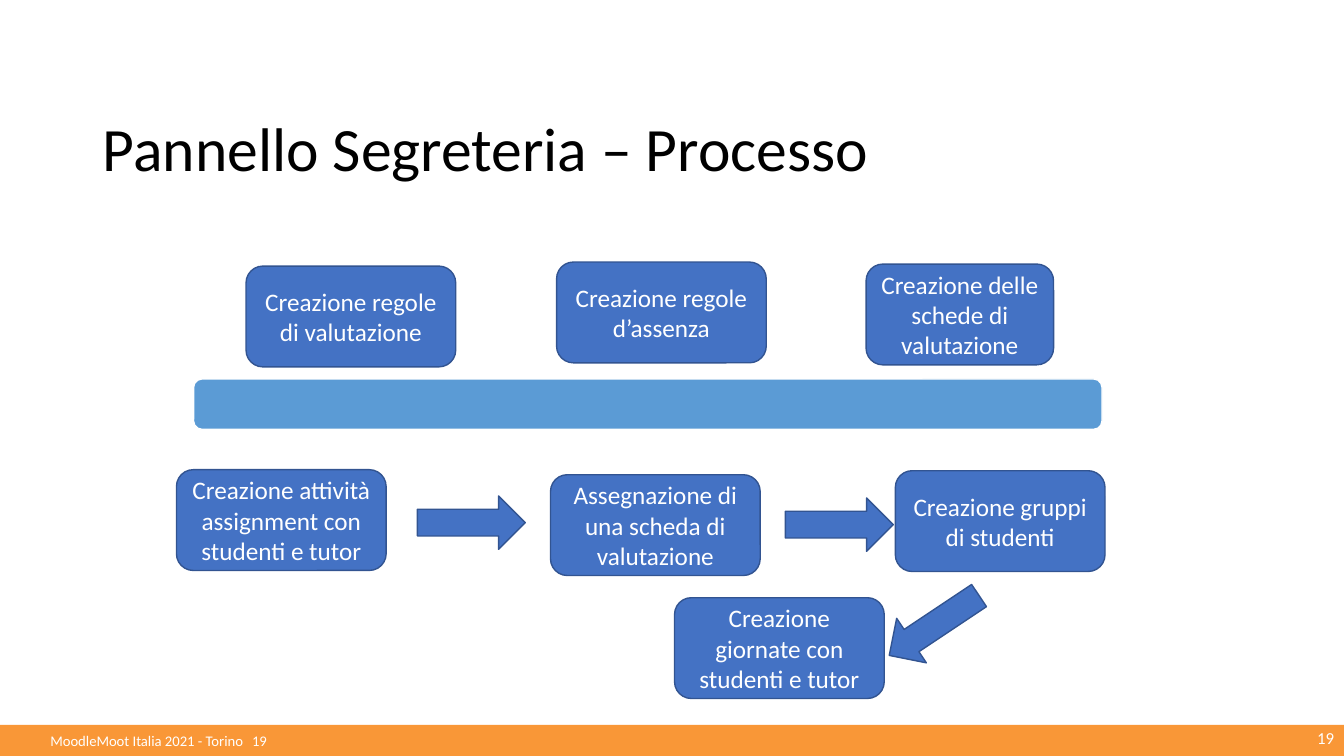
from dataclasses import dataclass

from lxml.etree import SubElement
from pptx import Presentation
from pptx.dml.color import RGBColor
from pptx.enum.shapes import MSO_SHAPE
from pptx.enum.text import MSO_ANCHOR, MSO_AUTO_SIZE, PP_ALIGN
from pptx.oxml.ns import qn
from pptx.shapes.autoshape import Shape
from pptx.slide import Slide
from pptx.text.text import TextFrame
from pptx.util import Inches, Pt

WHITE = RGBColor(0xFF, 0xFF, 0xFF)
BLACK = RGBColor(0, 0, 0)
BLUE = RGBColor(0x44, 0x72, 0xC4)
NAVY = RGBColor(0x32, 0x54, 0x91)
SKY = RGBColor(0x5B, 0x9B, 0xD5)
ORANGE = RGBColor(0xF9, 0x97, 0x37)
FONT = "Calibri"
WIDTH, HEIGHT = 13.33, 7.5
STEP_W, STEP_H = 2.08, 1
ARROW_W, ARROW_H = 1.07, 0.53
FOOT_H = 0.31


@dataclass
class Step:
    text: str
    left: float
    top: float
    width: float = STEP_W


@dataclass
class Arrow:
    left: float
    top: float
    turn: float = 0


STEPS = [
    Step("Creazione regole di valutazione", 2.44, 2.64),
    Step("Creazione regole d’assenza", 5.52, 2.6),
    Step("Creazione delle schede di valutazione", 8.59, 2.62, 1.86),
    Step("Creazione attività assignment con studenti e tutor", 1.75, 4.66),
    Step("Assegnazione di una scheda di valutazione", 5.46, 4.71),
    Step("Creazione gruppi di studenti", 8.88, 4.67),
    Step("Creazione giornate con studenti e tutor", 6.69, 5.93),
]
ARROWS = [Arrow(4.14, 4.92), Arrow(7.79, 4.94), Arrow(8.73, 5.94, 146.3)]


def write(frame: TextFrame, text: str, size: float, color: RGBColor,
          align: PP_ALIGN) -> None:
    frame.word_wrap = True
    frame.auto_size = MSO_AUTO_SIZE.NONE
    frame.vertical_anchor = MSO_ANCHOR.MIDDLE
    frame.text = text
    para = frame.paragraphs[0]
    para.alignment = align
    for run in para.runs:
        run.font.name = FONT
        run.font.size = Pt(size)
        run.font.color.rgb = color


def add_block(slide: Slide, kind: MSO_SHAPE, left: float, top: float,
              width: float, height: float, fill: RGBColor = BLUE,
              line: RGBColor | None = NAVY) -> Shape:
    block = slide.shapes.add_shape(kind, Inches(left), Inches(top),
                                   Inches(width), Inches(height))
    block.shadow.inherit = False
    block.fill.solid()
    block.fill.fore_color.rgb = fill
    if line is None:
        block.line.fill.background()
    else:
        block.line.color.rgb = line
        block.line.width = Pt(1)
    return block


def add_footer(slide: Slide) -> None:
    bar = add_block(slide, MSO_SHAPE.RECTANGLE, 0, HEIGHT - FOOT_H,
                    WIDTH, FOOT_H, ORANGE, None)
    frame = bar.text_frame
    frame.margin_left = 0
    props = frame.paragraphs[0]._p.get_or_add_pPr()
    tabs = SubElement(props, qn("a:tabLst"))
    for stop in (4.47, 10.54):
        SubElement(tabs, qn("a:tab"), pos=str(Inches(stop)), algn="l")
    write(frame, "\tMoodleMoot Italia 2021 - Torino\t19", 10.5, WHITE,
          PP_ALIGN.LEFT)

    number = slide.shapes.add_textbox(Inches(11.08), Inches(7.12),
                                      Inches(2.25), Inches(0.4))
    write(number.text_frame, "19", 12, WHITE, PP_ALIGN.RIGHT)


def add_title(slide: Slide) -> None:
    title = slide.shapes.title
    title.left, title.top = Inches(0.92), Inches(0.78)
    title.width, title.height = Inches(11.5), Inches(1.45)
    write(title.text_frame, "Pannello Segreteria – Processo", 44, BLACK,
          PP_ALIGN.LEFT)
    title.text_frame.paragraphs[0].line_spacing = 0.9


def main() -> None:
    deck = Presentation()
    deck.slide_width, deck.slide_height = Inches(WIDTH), Inches(HEIGHT)
    slide = deck.slides.add_slide(deck.slide_layouts.get_by_name("Title Only"))
    add_title(slide)
    add_footer(slide)
    add_block(slide, MSO_SHAPE.ROUNDED_RECTANGLE, 1.92, 3.76, 9.01, 0.5,
              SKY, WHITE)
    for arrow in ARROWS:
        block = add_block(slide, MSO_SHAPE.RIGHT_ARROW, arrow.left, arrow.top,
                          ARROW_W, ARROW_H)
        block.rotation = arrow.turn
    for step in STEPS:
        block = add_block(slide, MSO_SHAPE.ROUNDED_RECTANGLE, step.left,
                          step.top, step.width, STEP_H)
        write(block.text_frame, step.text, 18, WHITE, PP_ALIGN.CENTER)
    deck.save("out.pptx")


if __name__ == "__main__":
    main()
